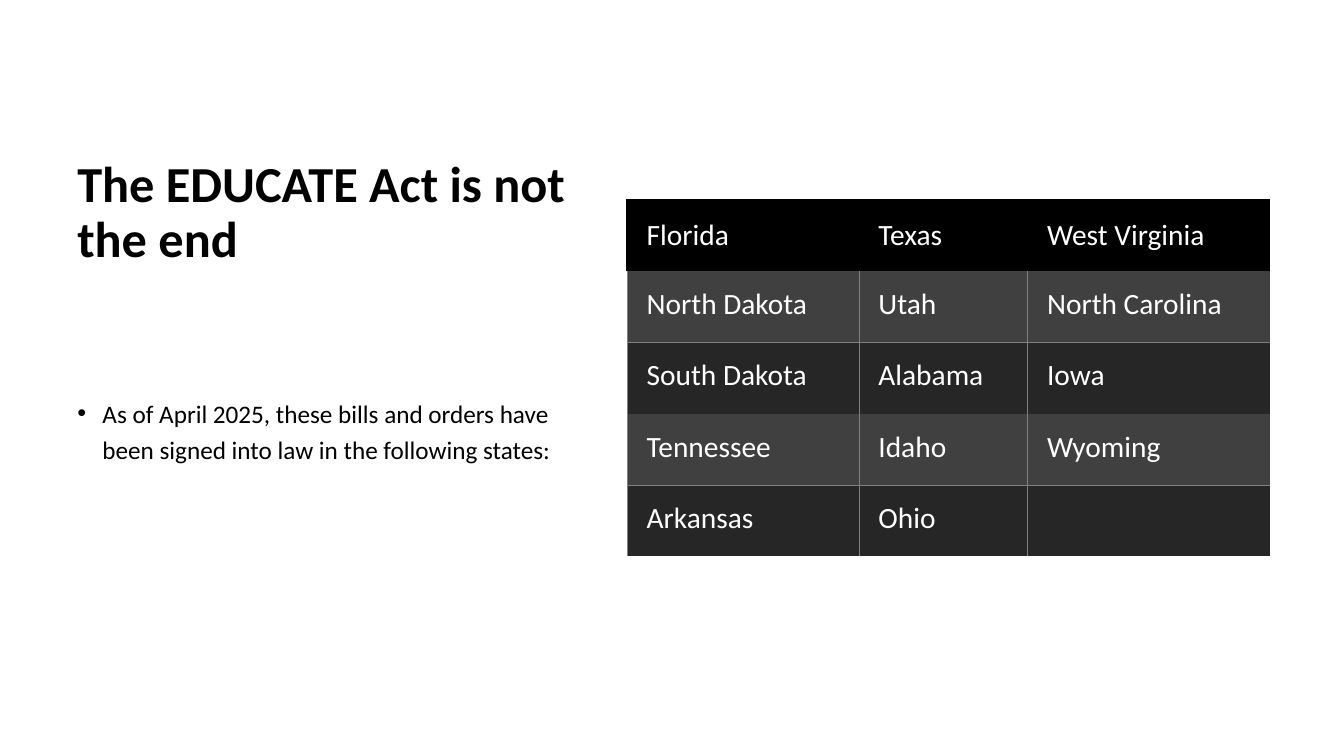
import pptx
import pptx.dml.color
import pptx.enum.text
import pptx.oxml
import pptx.oxml.ns
import pptx.util
from lxml import etree

Pt = pptx.util.Pt
Anchor = pptx.enum.text.MSO_ANCHOR

FONT = "Calibri"
BLACK, WHITE, GRID = "000000", "FFFFFF", "808080"
BAND_LIGHT, BAND_DARK = "404040", "262626"
COLUMN_WIDTHS = (165.5, 120.5, 173.5)
STATES = (
    ("Florida", "Texas", "West Virginia"),
    ("North Dakota", "Utah", "North Carolina"),
    ("South Dakota", "Alabama", "Iowa"),
    ("Tennessee", "Idaho", "Wyoming"),
    ("Arkansas", "Ohio", ""),
)


def color(value):
    return pptx.dml.color.RGBColor.from_string(value)


def write(frame, text, size, ink=BLACK, bold=False, line_spacing=1.0, space_before=0):
    para = frame.paragraphs[0]
    para.alignment = pptx.enum.text.PP_ALIGN.LEFT
    para.line_spacing = line_spacing
    para.space_before = Pt(space_before)
    span = para.add_run()
    span.text = text
    span.font.name = FONT
    span.font.size = Pt(size)
    span.font.bold = bold
    span.font.color.rgb = color(ink)
    return para


def place(shape, left, top, width, height, anchor):
    shape.left, shape.top = Pt(left), Pt(top)
    shape.width, shape.height = Pt(width), Pt(height)
    frame = shape.text_frame
    frame.word_wrap = True
    frame.auto_size = pptx.enum.text.MSO_AUTO_SIZE.NONE
    frame.vertical_anchor = anchor
    return frame


def add_bullet(para, indent):
    properties = para._p.get_or_add_pPr()
    properties.set("marL", str(Pt(indent)))
    properties.set("indent", str(-Pt(indent)))
    for tag, name, value in (("a:buFont", "typeface", "Arial"), ("a:buChar", "char", "•")):
        etree.SubElement(properties, pptx.oxml.ns.qn(tag)).set(name, value)


def set_borders(cell, **borders):
    properties = cell._tc.get_or_add_tcPr()
    for side in ("L", "R", "T", "B"):
        line = etree.SubElement(properties, pptx.oxml.ns.qn(f"a:ln{side}"))
        if side not in borders:
            etree.SubElement(line, pptx.oxml.ns.qn("a:noFill"))
            continue
        ink, width = borders[side]
        line.set("w", str(Pt(width)))
        fill = etree.SubElement(line, pptx.oxml.ns.qn("a:solidFill"))
        etree.SubElement(fill, pptx.oxml.ns.qn("a:srgbClr")).set("val", ink)


def cell_borders(row, column):
    thick, thin = (BLACK, 1.5), (GRID, 0.5)
    if row == 0:
        return {"T": thick, "L": thick} if column == 0 else {"T": thick}
    borders = {"L": thin}
    if column < len(COLUMN_WIDTHS) - 1:
        borders["R"] = thin
    if row % 2:
        borders["B"] = thin
    elif row:
        borders["T"] = thin
    return borders


def add_message(page, left, top, width, height):
    title_height, gap = 107, 9
    title = place(page.shapes.title, left, top, width, title_height, Anchor.BOTTOM)
    write(title, "The EDUCATE Act is not the end", 36, bold=True, line_spacing=0.9)

    body_top = top + title_height + gap
    body = place(page.placeholders[1], left, body_top, width, top + height - body_top, Anchor.TOP)
    body.margin_top = Pt(76)
    para = write(
        body,
        "As of April 2025, these bills and orders have been signed into law in the following states:",
        18, line_spacing=1.2, space_before=10,
    )
    add_bullet(para, 18)


def add_states(page, left, top, row_height):
    frame = page.shapes.add_table(
        len(STATES), len(COLUMN_WIDTHS), Pt(left), Pt(top),
        Pt(sum(COLUMN_WIDTHS)), Pt(row_height * len(STATES)),
    )
    table = frame.table
    table.horz_banding = False
    table.first_row = False
    for column, width in zip(table.columns, COLUMN_WIDTHS):
        column.width = Pt(width)
    for row, names in enumerate(STATES):
        table.rows[row].height = Pt(row_height)
        band = BLACK if row == 0 else BAND_LIGHT if row % 2 else BAND_DARK
        for column, name in enumerate(names):
            cell = table.cell(row, column)
            set_borders(cell, **cell_borders(row, column))
            cell.fill.solid()
            cell.fill.fore_color.rgb = color(band)
            cell.margin_left = Pt(14)
            cell.margin_top = cell.margin_right = cell.margin_bottom = Pt(11)
            cell.vertical_anchor = Anchor.TOP if row else Anchor.MIDDLE
            if name:
                write(cell.text_frame, name, 21, ink=WHITE)


def main():
    deck = pptx.Presentation()
    deck.slide_width, deck.slide_height = Pt(960), Pt(540)
    page = deck.slides.add_slide(deck.slide_layouts[1])
    add_message(page, 48, 88, 363.5, 364)
    add_states(page, 448, 142.5, 51)
    deck.save("out.pptx")


if __name__ == "__main__":
    main()
